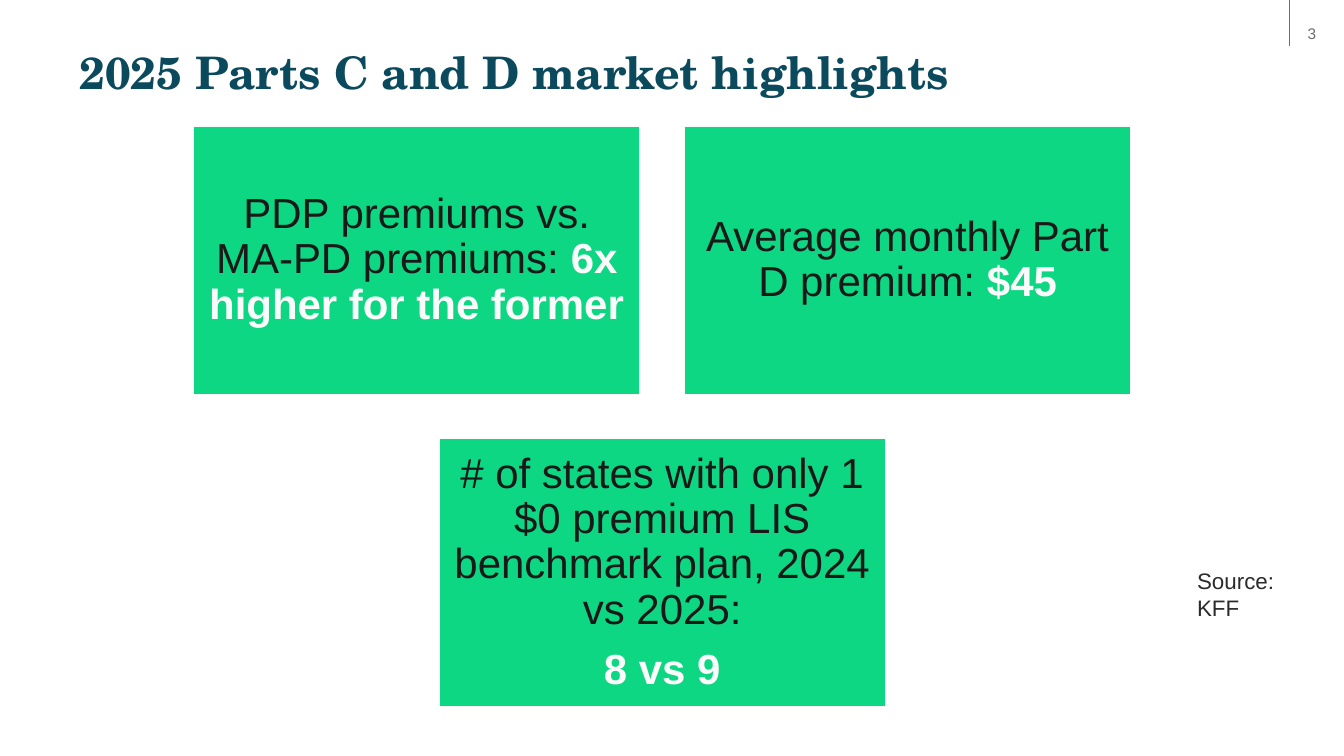
from dataclasses import dataclass

from lxml import etree
from pptx import Presentation
from pptx.dml.color import RGBColor
from pptx.enum.shapes import MSO_CONNECTOR, MSO_SHAPE
from pptx.enum.text import MSO_ANCHOR, PP_ALIGN
from pptx.oxml.ns import qn
from pptx.util import Cm, Pt

RECTANGLE = MSO_SHAPE.RECTANGLE
STRAIGHT = MSO_CONNECTOR.STRAIGHT
TOP, MIDDLE = MSO_ANCHOR.TOP, MSO_ANCHOR.MIDDLE
LEFT, CENTER = PP_ALIGN.LEFT, PP_ALIGN.CENTER


@dataclass(frozen=True)
class Style:
    size: float
    color: str
    bold: bool = False
    font: str = "Arial"


@dataclass(frozen=True)
class Theme:
    title: Style = Style(32, "0B4A5D", True, "TeX Gyre Schola")
    label: Style = Style(30, "191919")
    figure: Style = Style(30, "FAFAFA", True)
    source: Style = Style(16, "2B2B2B")
    page_number: Style = Style(11, "6D6D6D")
    card_fill: str = "0DD782"
    card_line: str = "FAFAFA"
    rule: str = "6D6D6D"


THEME = Theme()

# Card grid, in centimetres
CARD_WIDTH, CARD_HEIGHT, CARD_GAP = 11.26, 6.76, 1.11
GRID_CENTER, GRID_TOP = 16.69, 3.18
CARD_ROWS = [
    [
        [[("PDP premiums vs. MA-PD premiums: ", THEME.label),
          ("6x higher for the former", THEME.figure)]],
        [[("Average monthly Part D premium: ", THEME.label),
          ("$45", THEME.figure)]],
    ],
    [
        [[("# of states with only 1 $0 premium LIS benchmark plan, "
           "2024 vs 2025:", THEME.label)],
         [("8 vs 9", THEME.figure)]],
    ],
]


def fill_text(frame, paragraphs, align=LEFT, anchor=TOP, inset=(0, 0),
              line_spacing=1.0, space_after=0):
    """Write paragraphs, each a list of (text, style); inset is (sides, ends)."""
    frame.word_wrap = True
    frame.vertical_anchor = anchor
    frame.margin_left = frame.margin_right = Cm(inset[0])
    frame.margin_top = frame.margin_bottom = Cm(inset[1])
    for index, runs in enumerate(paragraphs):
        paragraph = frame.add_paragraph() if index else frame.paragraphs[0]
        paragraph.alignment = align
        paragraph.line_spacing = line_spacing
        paragraph.space_after = Pt(space_after)
        for text, style in runs:
            run = paragraph.add_run()
            run.text = text
            run.font.name = style.font
            run.font.size = Pt(style.size)
            run.font.bold = style.bold
            run.font.color.rgb = RGBColor.from_string(style.color)


def add_text(slide, left, top, width, height, text, style, **layout):
    box = slide.shapes.add_textbox(Cm(left), Cm(top), Cm(width), Cm(height))
    fill_text(box.text_frame, [[(text, style)]], **layout)


def add_card(slide, left, top, paragraphs):
    card = slide.shapes.add_shape(
        RECTANGLE, Cm(left), Cm(top), Cm(CARD_WIDTH), Cm(CARD_HEIGHT))
    card.shadow.inherit = False
    card.fill.solid()
    card.fill.fore_color.rgb = RGBColor.from_string(THEME.card_fill)
    card.line.color.rgb = RGBColor.from_string(THEME.card_line)
    card.line.width = Pt(1)
    fill_text(card.text_frame, paragraphs, CENTER, MIDDLE, (0.3, 0.3),
              line_spacing=0.9, space_after=10.5)


def add_cards(slide):
    """Place each row of cards centred on the grid."""
    for row, cards in enumerate(CARD_ROWS):
        row_width = len(cards) * (CARD_WIDTH + CARD_GAP) - CARD_GAP
        top = GRID_TOP + row * (CARD_HEIGHT + CARD_GAP)
        for column, paragraphs in enumerate(cards):
            left = GRID_CENTER - row_width / 2 + column * (CARD_WIDTH + CARD_GAP)
            add_card(slide, left, top, paragraphs)


def add_vertical_rule(slide, left, top, height):
    rule = slide.shapes.add_connector(
        STRAIGHT, Cm(left), Cm(top), Cm(left), Cm(top + height))
    rule.line.color.rgb = RGBColor.from_string(THEME.rule)
    rule.line.width = Pt(0.5)
    etree.SubElement(rule._element.spPr, qn("a:effectLst"))


def main():
    presentation = Presentation()
    presentation.slide_width = Cm(33.87)
    presentation.slide_height = Cm(19.05)
    slide = presentation.slides.add_slide(presentation.slide_layouts[6])

    add_text(slide, 32.49, 0.61, 1.14, 0.69, "3", THEME.page_number, align=CENTER)
    add_vertical_rule(slide, 32.49, 0, 1.15)
    add_text(slide, 2, 0.61, 29.26, 2.54, "2025 Parts C and D market highlights",
             THEME.title, anchor=MIDDLE, line_spacing=0.9)
    add_cards(slide)
    add_text(slide, 29.92, 14.17, 3.33, 1.63, "Source: KFF", THEME.source,
             inset=(0.25, 0.13))

    presentation.save("out.pptx")


if __name__ == "__main__":
    main()
